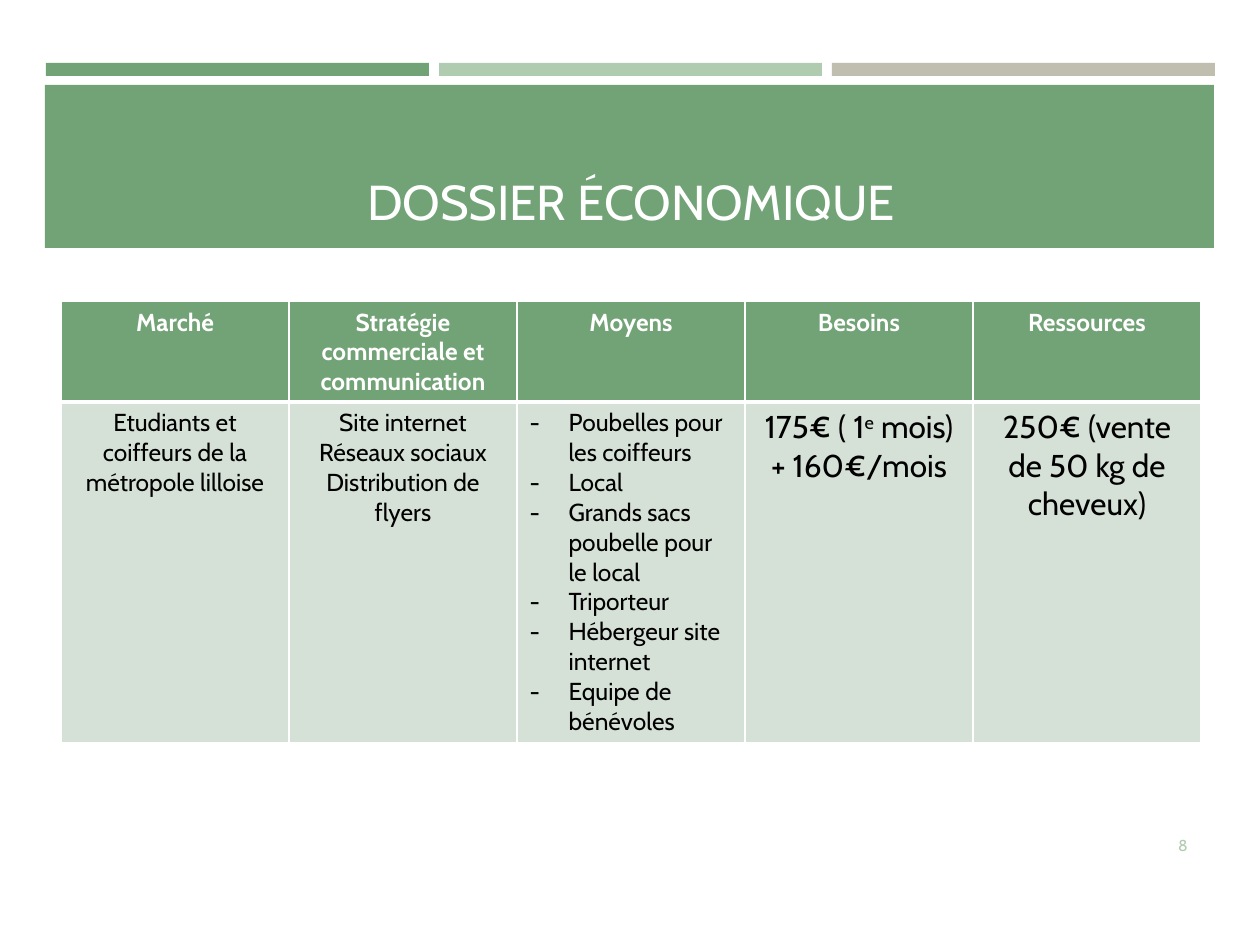
from dataclasses import dataclass

from lxml.etree import SubElement
from pptx import Presentation
from pptx.dml.color import RGBColor
from pptx.enum.shapes import MSO_SHAPE as Shape
from pptx.enum.text import MSO_ANCHOR as Anchor, PP_ALIGN as Align
from pptx.oxml.ns import qn
from pptx.util import Emu, Pt

# Content
TITLE = "DOSSIER ÉCONOMIQUE"
PAGE_NUMBER = "8"
HEADERS = ["Marché", "Stratégie commerciale et communication", "Moyens",
           "Besoins", "Ressources"]
MARKET = ["Etudiants et coiffeurs de la métropole lilloise"]
STRATEGY = ["Site internet", "Réseaux sociaux", "Distribution de flyers"]
MEANS = ["Poubelles pour les coiffeurs", "Local",
         "Grands sacs poubelle pour le local", "Triporteur",
         "Hébergeur site internet", "Equipe de bénévoles"]
NEEDS = [("175€ ( 1", "e", " mois) + 160€/mois")]  # middle part is superscript
RESOURCES = ["250€ (vente de 50 kg de cheveux)"]


@dataclass(frozen=True)
class Theme:
    font: str = "Cabin"
    green: str = "72A376"
    light_green: str = "B0CCB0"
    beige: str = "C0BEAF"
    pale: str = "D5E0D6"
    white: str = "FFFFFF"
    black: str = "000000"
    title: int = 28
    amount: int = 18
    body: int = 14
    number: int = 9


THEME = Theme()
BODY = [(MARKET, THEME.body, False), (STRATEGY, THEME.body, False),
        (MEANS, THEME.body, True), (NEEDS, THEME.amount, False),
        (RESOURCES, THEME.amount, False)]  # paragraphs, size, dashed list

# Layout in px, 126 to the inch
SCALE = 914400 // 126
STRIPES = [THEME.green, THEME.light_green, THEME.beige]
STRIPE_LEFT, STRIPE_TOP, STRIPE_WIDTH, STRIPE_HEIGHT, STRIPE_STEP = 46, 63, 383, 13, 393
BANNER = (45, 85, 1169, 163)
TITLE_BOX = (61, 97, 1140, 140)
NUMBER_BOX = (1091, 820, 109, 50)
TABLE_LEFT, TABLE_TOP, COLUMN_WIDTH = 61, 301, 228
ROW_HEIGHTS = [101, 341]
LIST_INDENT = 39


def px(value):
    return Emu(value * SCALE)


def color(code):
    return RGBColor.from_string(code)


def add_bar(page, frame, fill):
    bar = page.shapes.add_shape(Shape.RECTANGLE, *map(px, frame))
    bar.shadow.inherit = False
    bar.fill.solid()
    bar.fill.fore_color.rgb = color(fill)
    bar.line.fill.background()


def style(para, size, ink, bold=False, align=Align.CENTER):
    para.alignment = align
    for span in para.runs:
        span.font.name = THEME.font
        span.font.size = Pt(size)
        span.font.bold = bold
        span.font.color.rgb = color(ink)


def add_label(page, frame, text, size, ink, align, anchor):
    box = page.shapes.add_textbox(*map(px, frame))
    box.text_frame.word_wrap = True
    box.text_frame.vertical_anchor = anchor
    box.text_frame.text = text
    style(box.text_frame.paragraphs[0], size, ink, align=align)


def add_dash(para):
    props = para._p.get_or_add_pPr()
    props.set("marL", str(px(LIST_INDENT)))
    props.set("indent", str(-px(LIST_INDENT)))
    SubElement(props, qn("a:buFont"), typeface=THEME.font)
    SubElement(props, qn("a:buChar"), char="-")


def paint_cell(cell, fill, top, bottom):
    props = cell._tc.get_or_add_tcPr()
    for side, width in (("L", 1), ("R", 1), ("T", top), ("B", bottom)):
        line = SubElement(props, qn(f"a:ln{side}"), w=str(Pt(width)))
        SubElement(SubElement(line, qn("a:solidFill")), qn("a:srgbClr"), val=THEME.white)
    cell.fill.solid()
    cell.fill.fore_color.rgb = color(fill)


def fill_body(cell, paragraphs, size, dashed):
    frame = cell.text_frame
    for index, content in enumerate(paragraphs):
        para = frame.paragraphs[0] if index == 0 else frame.add_paragraph()
        if isinstance(content, tuple):
            for part in content:
                para.add_run().text = part
            para.runs[1].font._element.set("baseline", "30000")
        else:
            para.text = content
        if dashed:
            add_dash(para)
        style(para, size, THEME.black, align=Align.LEFT if dashed else Align.CENTER)


def add_plan(page):
    table = page.shapes.add_table(
        len(ROW_HEIGHTS), len(HEADERS), px(TABLE_LEFT), px(TABLE_TOP),
        px(COLUMN_WIDTH * len(HEADERS)), px(sum(ROW_HEIGHTS))).table
    for row, height in zip(table.rows, ROW_HEIGHTS):
        row.height = px(height)
    for index, (header, body) in enumerate(zip(HEADERS, BODY)):
        table.columns[index].width = px(COLUMN_WIDTH)
        head, cell = table.cell(0, index), table.cell(1, index)
        paint_cell(head, THEME.green, 1, 3)
        head.text_frame.text = header
        style(head.text_frame.paragraphs[0], THEME.body, THEME.white, bold=True)
        paint_cell(cell, THEME.pale, 3, 1)
        fill_body(cell, *body)


def main():
    deck = Presentation()
    deck.slide_width, deck.slide_height = px(1260), px(945)
    page = deck.slides.add_slide(deck.slide_layouts[6])

    # Banner
    for index, fill in enumerate(STRIPES):
        left = STRIPE_LEFT + index * STRIPE_STEP
        add_bar(page, (left, STRIPE_TOP, STRIPE_WIDTH, STRIPE_HEIGHT), fill)
    add_bar(page, BANNER, THEME.green)
    add_label(page, TITLE_BOX, TITLE, THEME.title, THEME.white,
              Align.CENTER, Anchor.BOTTOM)

    # Table and page number
    add_plan(page)
    add_label(page, NUMBER_BOX, PAGE_NUMBER, THEME.number, THEME.light_green,
              Align.RIGHT, Anchor.MIDDLE)
    deck.save("out.pptx")


if __name__ == "__main__":
    main()
